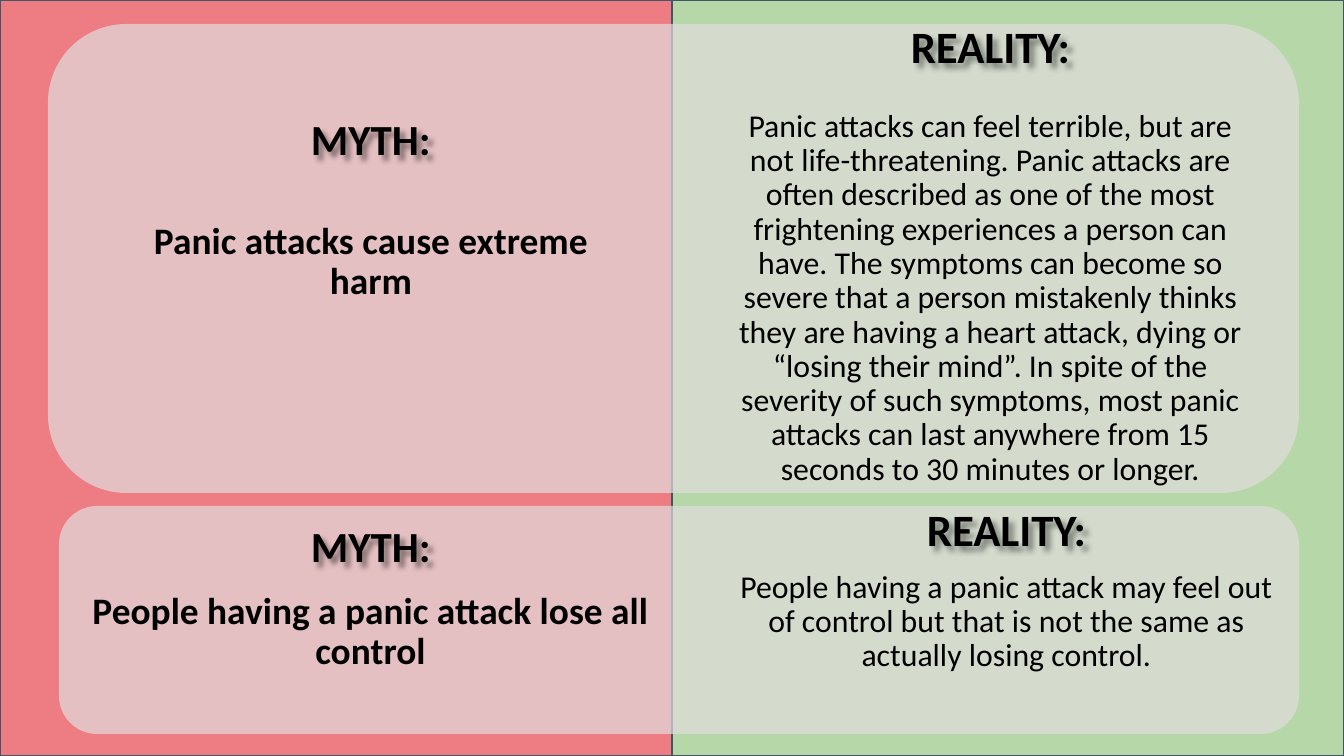
import pptx
import pptx.dml.color
import pptx.enum.shapes
import pptx.enum.text
import pptx.oxml
import pptx.oxml.ns
import pptx.util
from lxml import etree

RGBColor = pptx.dml.color.RGBColor
Shape = pptx.enum.shapes.MSO_SHAPE

EMU_PER_PX = 914400 / 134.4
WIDTH, HEIGHT = 1344, 756
HALF = WIDTH // 2

MYTH_RED = RGBColor(0xED, 0x7C, 0x83)
REALITY_GREEN = RGBColor(0xB6, 0xD7, 0xA8)
OUTLINE = RGBColor(0x44, 0x54, 0x6A)
PANEL_GREY = RGBColor(0xE2, 0xDE, 0xDE)
BLACK = RGBColor(0, 0, 0)

MYTH_INSETS = (9, 9)
REALITY_INSETS = (37, 11)

TEXT_SHADOW = (
    '<a:effectLst %s><a:outerShdw blurRad="38100" dist="38100" dir="2700000" algn="tl">'
    '<a:srgbClr val="000000"><a:alpha val="43000"/></a:srgbClr>'
    '</a:outerShdw></a:effectLst>' % pptx.oxml.ns.nsdecls("a")
)


def px(length):
    return pptx.util.Emu(round(length * EMU_PER_PX))


class MythSlide:
    font = "Calibri"

    def __init__(self, presentation):
        self.slide = presentation.slides.add_slide(presentation.slide_layouts[6])

    def block(self, kind, box, color):
        block = self.slide.shapes.add_shape(kind, *map(px, box))
        block.shadow.inherit = False
        block.fill.solid()
        block.fill.fore_color.rgb = color
        return block

    def background(self, left, color):
        half = self.block(Shape.RECTANGLE, (left, 0, HALF, HEIGHT), color)
        half.line.color.rgb = OUTLINE
        half.line.width = pptx.util.Pt(0.75)

    def panel(self, box):
        """Add a rounded panel that is 70% opaque."""
        panel = self.block(Shape.ROUNDED_RECTANGLE, box, PANEL_GREY)
        panel.adjustments[0] = 0.167
        panel.line.fill.background()
        color = panel.fill._xPr.find(".//" + pptx.oxml.ns.qn("a:srgbClr"))
        etree.SubElement(color, pptx.oxml.ns.qn("a:alpha"), val="70000")

    def text(self, words, box, insets, size, bold=False, spacing=0.9, top=5):
        text = self.slide.shapes.add_textbox(*map(px, box))
        frame = text.text_frame
        frame.word_wrap = True
        frame.margin_left, frame.margin_right = map(px, insets)
        frame.margin_top, frame.margin_bottom = px(top), px(5)
        paragraph = frame.paragraphs[0]
        paragraph.text = words
        paragraph.alignment = pptx.enum.text.PP_ALIGN.CENTER
        paragraph.line_spacing = spacing
        paragraph.font.name = self.font
        paragraph.font.size = pptx.util.Pt(size)
        paragraph.font.bold = bold
        paragraph.font.color.rgb = BLACK
        return text

    def heading(self, words, box, insets, size):
        heading = self.text(words, box, insets, size, bold=True, spacing=0.8)
        heading._element.spPr.append(pptx.oxml.parse_xml(TEXT_SHADOW))


def main():
    presentation = pptx.Presentation()
    presentation.slide_width, presentation.slide_height = px(WIDTH), px(HEIGHT)
    page = MythSlide(presentation)

    page.background(HALF, REALITY_GREEN)
    page.background(0, MYTH_RED)

    page.panel((48, 24, 1251, 469))
    page.text("Panic attacks cause extreme harm",
              (102, 172, 538, 173), MYTH_INSETS, 20, bold=True, top=50)
    page.text("Panic attacks can feel terrible, but are not life-threatening. "
              "Panic attacks are often described as one of the most frightening "
              "experiences a person can have. The symptoms can become so severe "
              "that a person mistakenly thinks they are having a heart attack, "
              "dying or “losing their mind”. In spite of the severity of such "
              "symptoms, most panic attacks can last anywhere from 15 seconds to "
              "30 minutes or longer.",
              (688, 44, 579, 449), REALITY_INSETS, 17, top=66)

    page.panel((59, 506, 1240, 228))
    page.text("People having a panic attack lose all control",
              (81, 507, 579, 187), MYTH_INSETS, 20, bold=True, top=94)
    page.text("People having a panic attack may feel out of control but that is "
              "not the same as actually losing control.",
              (688, 507, 611, 227), REALITY_INSETS, 17, top=64)

    for left, top in ((688, 24), (704, 507)):
        page.heading("REALITY:", (left, top, 579, 82), REALITY_INSETS, 24)
    for top in (118, 525):
        page.heading("MYTH:", (102, top, 538, 69), MYTH_INSETS, 23)

    presentation.save("out.pptx")


if __name__ == "__main__":
    main()
